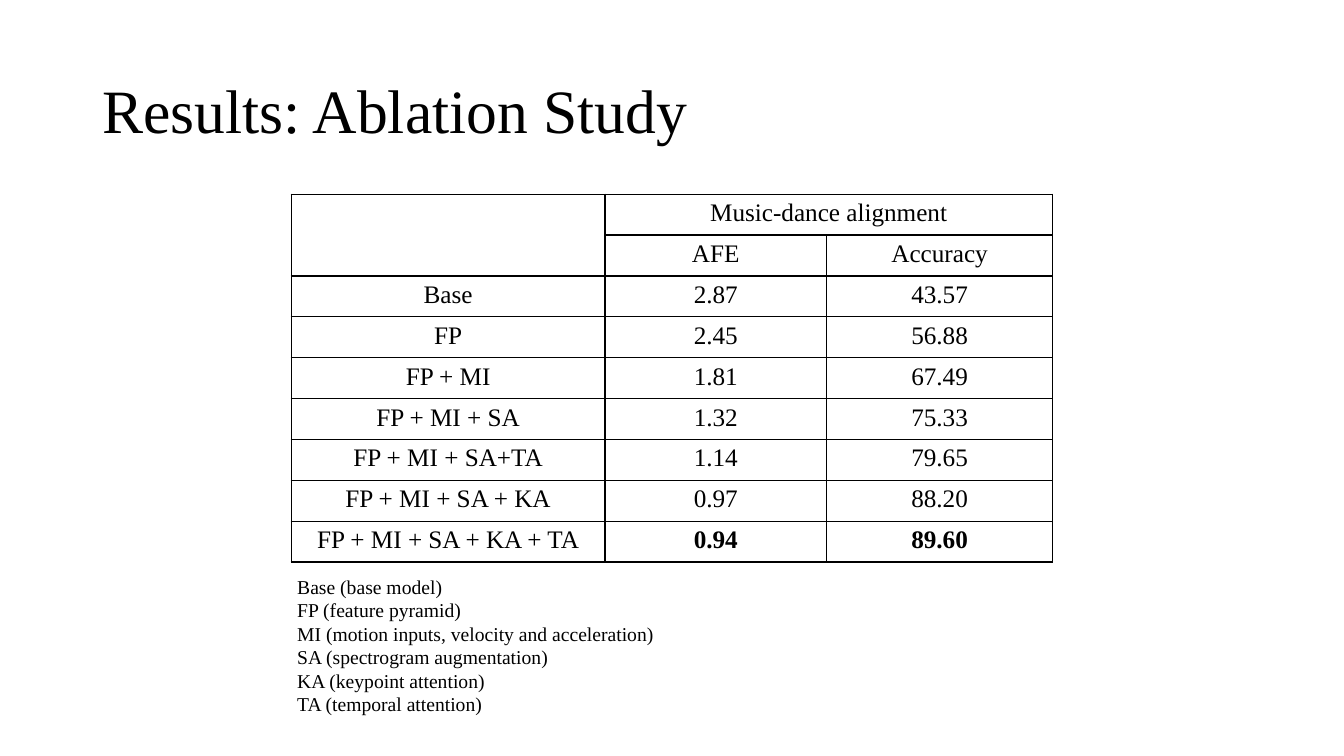
"""Build the ablation study slide."""
from lxml.etree import SubElement
from pptx import Presentation
from pptx.dml.color import RGBColor
from pptx.enum.text import MSO_ANCHOR, MSO_AUTO_SIZE, PP_ALIGN
from pptx.oxml.ns import qn
from pptx.util import Pt

FONT = "Times New Roman"
COLORS = {"ink": "000000"}
COLUMN_WIDTHS = [224, 158.4, 161.4]
ROW_HEIGHT = 29.2
ROWS = [
    ["", "Music-dance alignment", ""],
    ["", "AFE", "Accuracy"],
    ["Base", "2.87", "43.57"],
    ["FP", "2.45", "56.88"],
    ["FP + MI", "1.81", "67.49"],
    ["FP + MI + SA", "1.32", "75.33"],
    ["FP + MI + SA+TA", "1.14", "79.65"],
    ["FP + MI + SA + KA", "0.97", "88.20"],
    ["FP + MI + SA + KA + TA", "0.94", "89.60"],
]
LEGEND = [
    "Base (base model)",
    "FP (feature pyramid)",
    "MI (motion inputs, velocity and acceleration)",
    "SA (spectrogram augmentation)",
    "KA (keypoint attention)",
    "TA (temporal attention)",
]


def format_text(tf, size, align=PP_ALIGN.LEFT, bold=False):
    for p in tf.paragraphs:
        p.alignment = align
        for r in p.runs:
            r.font.name = FONT
            r.font.size = Pt(size)
            r.font.bold = bold
            r.font.color.rgb = RGBColor.from_string(COLORS["ink"])


def add_borders(cell):
    tc_pr = cell._tc.get_or_add_tcPr()
    for side in ("a:lnL", "a:lnR", "a:lnT", "a:lnB"):
        ln = SubElement(tc_pr, qn(side), w=str(Pt(1)))
        fill = SubElement(ln, qn("a:solidFill"))
        SubElement(fill, qn("a:srgbClr"), val=COLORS["ink"])


def set_title(s, text):
    title = s.shapes.title
    title.left, title.top, title.width, title.height = Pt(66), Pt(28.8), Pt(828), Pt(104.4)
    tf = title.text_frame
    tf.text = text
    tf.auto_size = MSO_AUTO_SIZE.NONE
    tf.vertical_anchor = MSO_ANCHOR.MIDDLE
    tf.paragraphs[0].line_spacing = 0.9
    format_text(tf, 44)


def add_results_table(s, left, top):
    frame = s.shapes.add_table(len(ROWS), len(COLUMN_WIDTHS), Pt(left), Pt(top),
                               Pt(sum(COLUMN_WIDTHS)), Pt(ROW_HEIGHT * len(ROWS)))
    table = frame.table
    table.first_row = table.horz_banding = False
    for column, width in zip(table.columns, COLUMN_WIDTHS):
        column.width = Pt(width)
    for i, values in enumerate(ROWS):
        table.rows[i].height = Pt(ROW_HEIGHT)
        for j, value in enumerate(values):
            cell = table.cell(i, j)
            cell.text_frame.text = value
            best = i == len(ROWS) - 1 and j > 0
            format_text(cell.text_frame, 18, PP_ALIGN.CENTER, best)
            add_borders(cell)
            cell.fill.background()
    table.cell(0, 0).merge(table.cell(1, 0))
    table.cell(0, 1).merge(table.cell(0, 2))


def add_legend(s, left, top, width, height):
    tf = s.shapes.add_textbox(Pt(left), Pt(top), Pt(width), Pt(height)).text_frame
    tf.text = "\n".join(LEGEND)
    tf.word_wrap = False
    tf.auto_size = MSO_AUTO_SIZE.SHAPE_TO_FIT_TEXT
    format_text(tf, 14)


def main():
    prs = Presentation()
    prs.slide_width, prs.slide_height = Pt(960), Pt(540)
    s = prs.slides.add_slide(prs.slide_layouts[5])
    set_title(s, "Results: Ablation Study")
    add_results_table(s, 208.1, 138.7)
    add_legend(s, 205.2, 406.8, 275, 108.7)
    prs.save("out.pptx")


if __name__ == "__main__":
    main()
